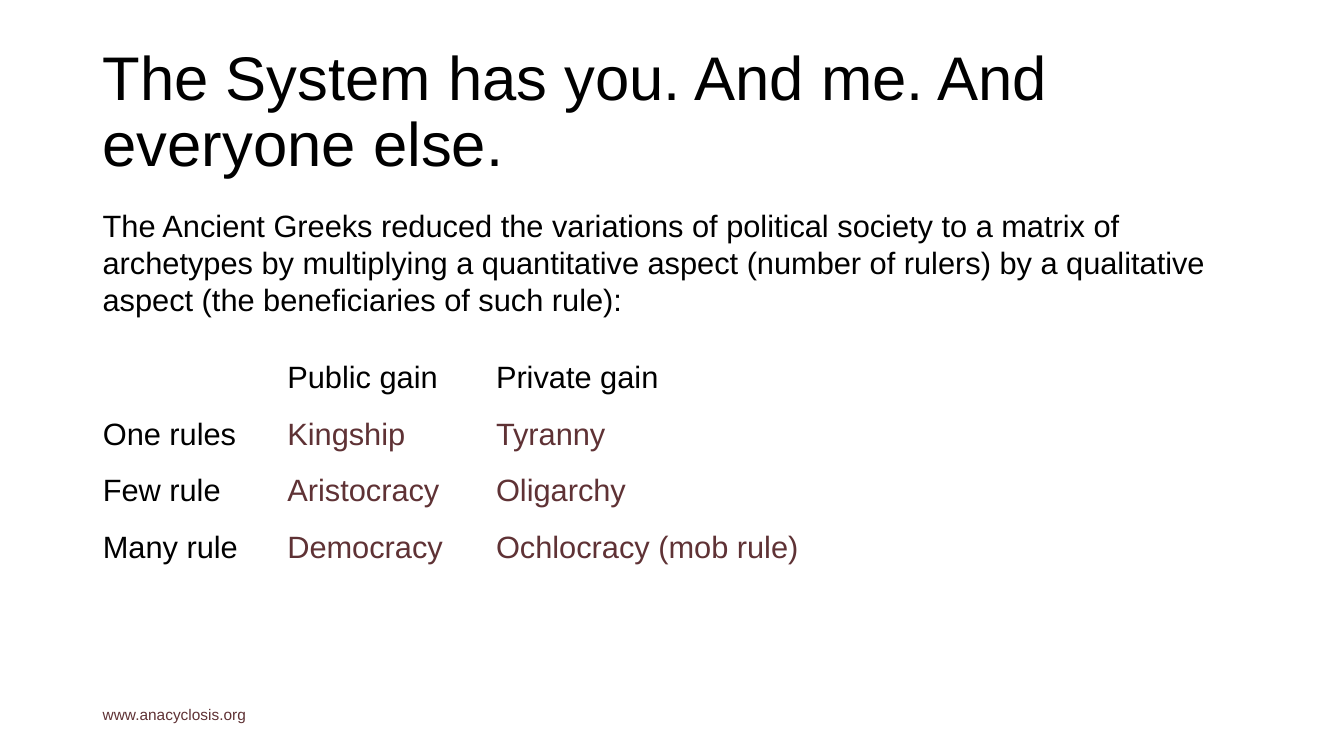
import pptx
import pptx.util
import pptx.dml.color
import pptx.enum.text

Inches = pptx.util.Inches
BLACK = pptx.dml.color.RGBColor(0x00, 0x00, 0x00)
MAROON = pptx.dml.color.RGBColor(0x5F, 0x32, 0x35)
ANCHOR = pptx.enum.text.MSO_ANCHOR
LEFT = 0.92

TITLE = "The System has you. And me. And everyone else."
INTRO = (
    "The Ancient Greeks reduced the variations of political society to a "
    "matrix of archetypes by multiplying a quantitative aspect (number of "
    "rulers) by a qualitative aspect (the beneficiaries of such rule):"
)
RULES = [
    ["", "Public gain", "Private gain"],
    ["One rules", "Kingship", "Tyranny"],
    ["Few rule", "Aristocracy", "Oligarchy"],
    ["Many rule", "Democracy", "Ochlocracy (mob rule)"],
]
WIDTHS = [1.83, 2.07, 3.31]
ROW_HEIGHT = 0.56


def write(frame, text, size, color):
    """Put one styled paragraph in a text frame."""
    para = frame.paragraphs[0]
    para.text = text
    look = {"name": "Arial", "size": pptx.util.Pt(size), "bold": False}
    for key, value in look.items():
        setattr(para.font, key, value)
    para.font.color.rgb = color
    return para


def add_text(slide, box, text, size, color=BLACK, anchor=ANCHOR.TOP):
    """Add a wrapped text box."""
    frame = slide.shapes.add_textbox(*map(Inches, box)).text_frame
    frame.word_wrap = True
    frame.vertical_anchor = anchor
    return write(frame, text, size, color)


def add_grid(slide, top):
    """Add the plain table of regimes."""
    table = slide.shapes.add_table(
        len(RULES), len(WIDTHS), Inches(LEFT), Inches(top),
        Inches(sum(WIDTHS)), Inches(ROW_HEIGHT * len(RULES)),
    ).table
    table.first_row = table.horz_banding = False
    for column, width in zip(table.columns, WIDTHS):
        column.width = Inches(width)
    for r, row in enumerate(RULES):
        for c, text in enumerate(row):
            cell = table.cell(r, c)
            cell.fill.background()
            # Headings are black, regimes maroon
            write(cell.text_frame, text, 22, MAROON if r and c else BLACK)


def main():
    deck = pptx.Presentation()
    deck.slide_width, deck.slide_height = Inches(13.33), Inches(7.5)
    slide = deck.slides.add_slide(deck.slide_layouts[6])

    # Footer
    add_text(slide, (LEFT, 6.95, 3.35, 0.29), "www.anacyclosis.org", 11, MAROON)

    # Title
    title = add_text(slide, (LEFT, 0.4, 11.5, 1.45), TITLE, 44,
                     anchor=ANCHOR.MIDDLE)
    title.line_spacing = 0.9

    # Table and introduction
    add_grid(slide, 3.53)
    add_text(slide, (LEFT, 2, 11.5, 1.66), INTRO, 22)

    deck.save("out.pptx")


if __name__ == "__main__":
    main()
